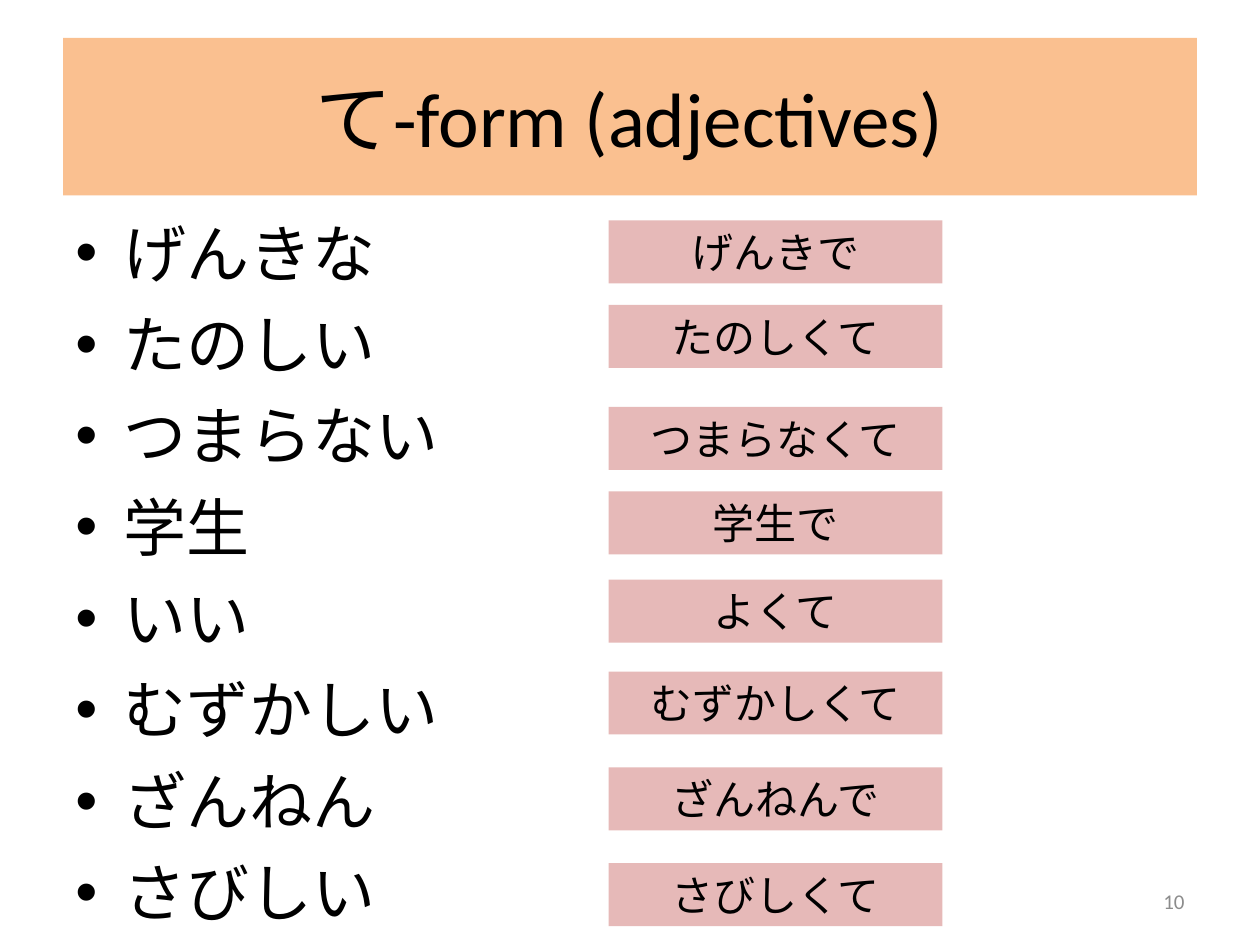
"""Build a slide pairing Japanese adjectives and nouns with their te-forms."""
from lxml import etree
from pptx import Presentation
from pptx.dml.color import RGBColor
from pptx.enum.shapes import MSO_SHAPE
from pptx.enum.text import MSO_ANCHOR, PP_ALIGN
from pptx.oxml.ns import qn
from pptx.util import Inches, Pt

RECTANGLE = MSO_SHAPE.RECTANGLE
TOP, MIDDLE = MSO_ANCHOR.TOP, MSO_ANCHOR.MIDDLE
LEFT, CENTER, RIGHT = PP_ALIGN.LEFT, PP_ALIGN.CENTER, PP_ALIGN.RIGHT

BLACK = RGBColor(0x00, 0x00, 0x00)
GRAY = RGBColor(0x8C, 0x8C, 0x8C)
ORANGE = RGBColor(0xFA, 0xC0, 0x90)
PINK = RGBColor(0xE6, 0xB9, 0xB8)

HEADING = "て-form (adjectives)"
PAGE_NUMBER = "10"
WORD_FORMS = [
    ("げんきな", "げんきで", 1.75),
    ("たのしい", "たのしくて", 2.42),
    ("つまらない", "つまらなくて", 3.23),
    ("学生", "学生で", 3.9),
    ("いい", "よくて", 4.6),
    ("むずかしい", "むずかしくて", 5.33),
    ("ざんねん", "ざんねんで", 6.09),
    ("さびしい", "さびしくて", 6.85),
]


def format_text(frame, size, font, color, align, anchor):
    frame.word_wrap = True
    frame.vertical_anchor = anchor
    for paragraph in frame.paragraphs:
        paragraph.alignment = align
        for run in paragraph.runs:
            run.font.size = Pt(size)
            run.font.name = font
            run.font.color.rgb = color
            east_asian = etree.Element(qn("a:ea"), typeface=font)
            run.font._element.find(qn("a:latin")).addnext(east_asian)


def add_bullet(paragraph):
    paragraph.space_before = Pt(9)
    properties = paragraph._p.get_or_add_pPr()
    properties.set("marL", str(Inches(0.38)))
    properties.set("indent", str(Inches(-0.38)))
    etree.SubElement(properties, qn("a:buFont"), typeface="Arial")
    etree.SubElement(properties, qn("a:buChar"), char="•")


def add_heading(slide):
    heading = slide.shapes.title
    heading.left, heading.top = Inches(0.5), Inches(0.3)
    heading.width, heading.height = Inches(9), Inches(1.25)
    heading.fill.solid()
    heading.fill.fore_color.rgb = ORANGE
    heading.text_frame.text = HEADING
    format_text(heading.text_frame, 44, "Calibri", BLACK, CENTER, MIDDLE)


def add_words(slide):
    words = slide.shapes.add_textbox(
        Inches(0.5), Inches(1.65), Inches(9), Inches(5.75)).text_frame
    words.text = "\n".join(word for word, _, _ in WORD_FORMS)
    format_text(words, 36, "Arial", BLACK, LEFT, TOP)
    for paragraph in words.paragraphs:
        add_bullet(paragraph)


def add_te_form(slide, te_form, top):
    answer = slide.shapes.add_shape(
        RECTANGLE, Inches(4.83), Inches(top), Inches(2.65), Inches(0.5))
    answer.shadow.inherit = False
    answer.fill.solid()
    answer.fill.fore_color.rgb = PINK
    answer.line.fill.background()
    answer.text_frame.text = te_form
    format_text(answer.text_frame, 24, "Arial", BLACK, CENTER, TOP)


def add_page_number(slide):
    number = slide.shapes.add_textbox(
        Inches(7.17), Inches(6.95), Inches(2.33), Inches(0.4)).text_frame
    number.text = PAGE_NUMBER
    format_text(number, 12, "Calibri", GRAY, RIGHT, MIDDLE)


def main():
    deck = Presentation()
    deck.slide_width, deck.slide_height = Inches(10), Inches(7.5)
    slide = deck.slides.add_slide(deck.slide_layouts[5])
    add_heading(slide)
    add_words(slide)
    add_page_number(slide)
    for _, te_form, top in WORD_FORMS:
        add_te_form(slide, te_form, top)
    deck.save("out.pptx")


if __name__ == "__main__":
    main()
